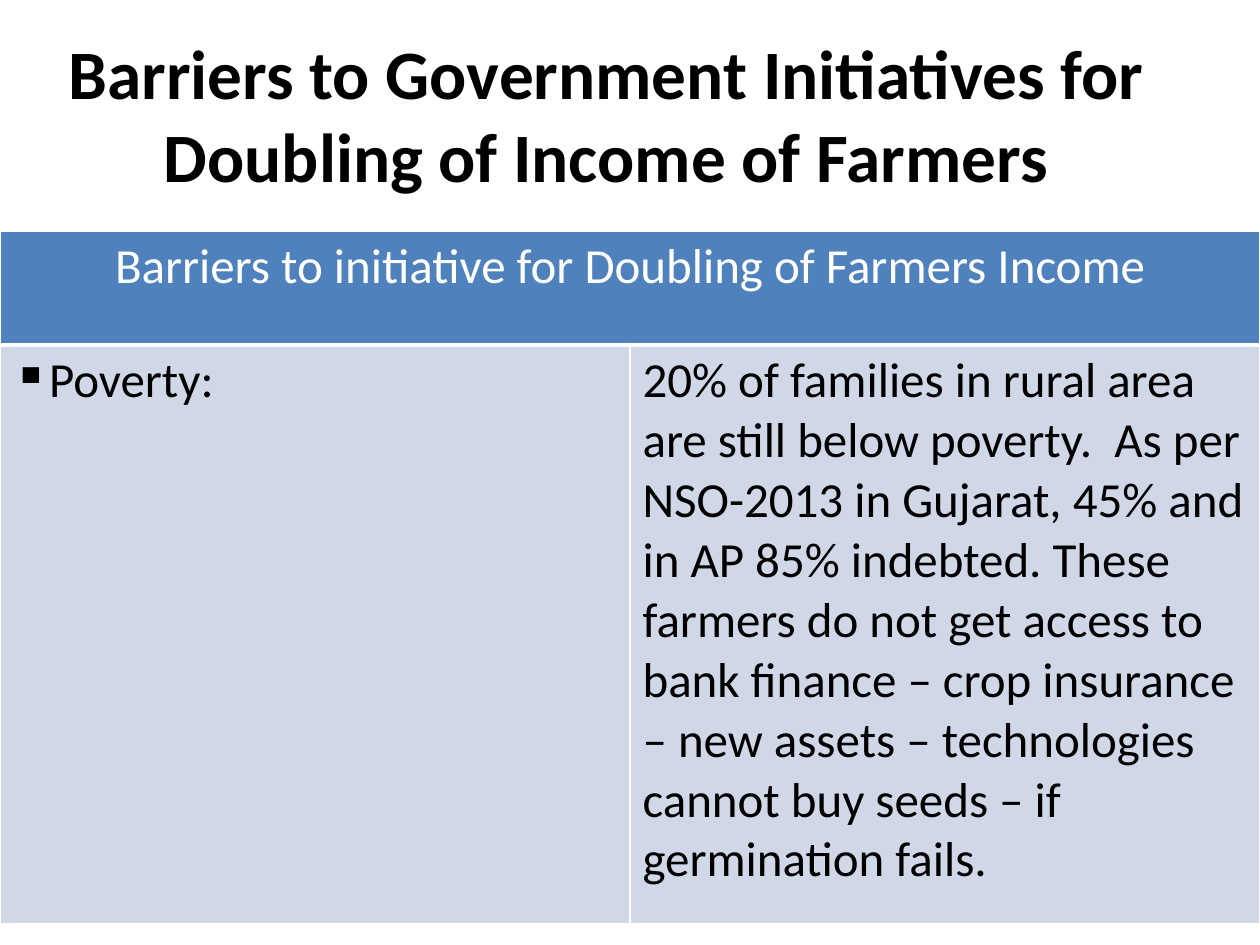
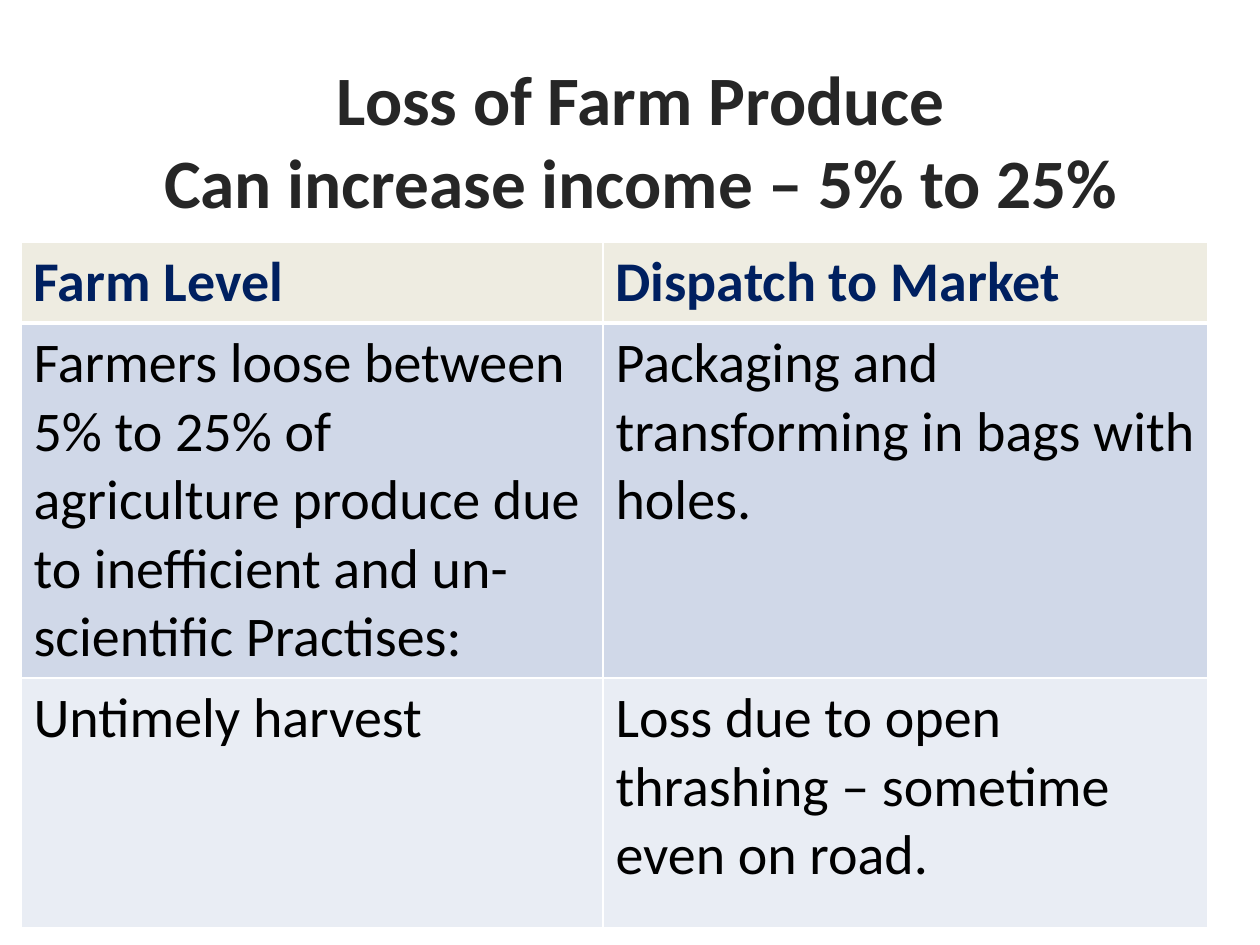
"""Build two slides on farm income, each with a title and a table."""
import pptx
import pptx.dml.color
import pptx.enum.text
import pptx.oxml
import pptx.oxml.ns
import pptx.util

THEME = {
    "font": "Calibri",
    "title_size": 39.6,
    "black": "000000",
    "charcoal": "262626",
    "navy": "002060",
    "white": "FFFFFF",
    "blue": "4F81BD",
    "cream": "EEECE1",
    "bands": ("D0D8E8", "E9EDF4"),
    "border": 1,
    "header_border": 3,
}

SLIDES = [
    {
        "title": ["Barriers to Government Initiatives for", "Doubling of Income of Farmers"],
        "title_box": (32, 32, 1166, 179),
        "title_insets": {"margin_right": 30, "margin_bottom": 22},
        "title_color": "black",
        "table_origin": (0, 231),
        "columns": (630, 630),
        "row_heights": (114, 579),
        "text_size": 28,
        "header": {"fill": "blue", "color": "white", "bold": False, "merged": True},
        "bulleted": ["Poverty:"],
        "rows": [
            ["Barriers to initiative for Doubling of Farmers Income"],
            ["Poverty:",
             "20% of families in rural area are still below poverty.  As per NSO-2013 in "
             "Gujarat, 45% and in AP 85% indebted. These farmers do not get access to bank "
             "finance – crop insurance – new assets – technologies cannot buy seeds – if "
             "germination fails."],
        ],
    },
    {
        "title": ["Loss of Farm Produce", "Can increase income – 5% to 25%"],
        "title_box": (53, 32, 1176, 179),
        "title_insets": {"margin_top": 41},
        "title_color": "charcoal",
        "table_origin": (21, 242),
        "columns": (582, 605),
        "row_heights": (80, 355, 250),
        "text_size": 32,
        "header": {"fill": "cream", "color": "navy", "bold": True, "merged": False},
        "bulleted": [],
        "rows": [
            ["Farm Level", "Dispatch to Market"],
            ["Farmers loose between 5% to 25% of agriculture produce due to inefficient "
             "and un-scientific Practises:",
             "Packaging and transforming in bags with holes."],
            ["Untimely harvest", "Loss due to open thrashing – sometime even on road."],
        ],
    },
]


def px(length):
    return pptx.util.Emu(round(length * 914400 / 126))


def rgb(value):
    return pptx.dml.color.RGBColor.from_string(value)


def format_text(text_frame, size, color, bold, centered):
    for paragraph in text_frame.paragraphs:
        if centered:
            paragraph.alignment = pptx.enum.text.PP_ALIGN.CENTER
        for run in paragraph.runs:
            run.font.name = THEME["font"]
            run.font.size = pptx.util.Pt(size)
            run.font.bold = bold
            run.font.color.rgb = rgb(color)


def add_title(slide, content):
    title = slide.shapes.title
    title.left, title.top, title.width, title.height = map(px, content["title_box"])
    text_frame = title.text_frame
    text_frame.text = "\n".join(content["title"])
    text_frame.word_wrap = True
    text_frame.auto_size = pptx.enum.text.MSO_AUTO_SIZE.NONE
    text_frame.vertical_anchor = pptx.enum.text.MSO_ANCHOR.MIDDLE
    text_frame.margin_top = text_frame.margin_bottom = px(6)
    for side, inset in content["title_insets"].items():
        setattr(text_frame, side, px(inset))
    format_text(text_frame, THEME["title_size"], THEME[content["title_color"]], True, True)


def set_borders(cell, bottom_width):
    properties = cell._tc.get_or_add_tcPr()
    widths = {"lnL": THEME["border"], "lnR": THEME["border"],
              "lnT": THEME["border"], "lnB": bottom_width}
    for side, width in widths.items():
        properties.append(pptx.oxml.parse_xml(
            f'<a:{side} {pptx.oxml.ns.nsdecls("a")} w="{pptx.util.Pt(width)}"><a:solidFill>'
            f'<a:srgbClr val="{THEME["white"]}"/></a:solidFill></a:{side}>'))


def add_bullet(paragraph):
    properties = paragraph._p.get_or_add_pPr()
    properties.set("marL", "0")
    properties.set("indent", "0")
    properties.append(pptx.oxml.parse_xml(
        f'<a:buChar {pptx.oxml.ns.nsdecls("a")} char="▪"/>'))


def add_table(slide, content):
    columns, heights, header = content["columns"], content["row_heights"], content["header"]
    bounds = (*content["table_origin"], sum(columns), sum(heights))
    table = slide.shapes.add_table(len(heights), len(columns), *map(px, bounds)).table
    for column, width in zip(table.columns, columns):
        column.width = px(width)
    for row, height in zip(table.rows, heights):
        row.height = px(height)
    if header["merged"]:
        table.cell(0, 0).merge(table.cell(0, len(columns) - 1))
    for row_index, texts in enumerate(content["rows"]):
        is_header = row_index == 0
        fill = THEME[header["fill"]] if is_header else THEME["bands"][(row_index - 1) % 2]
        color = THEME[header["color"]] if is_header else THEME["black"]
        for column_index, text in enumerate(texts):
            cell = table.cell(row_index, column_index)
            set_borders(cell, THEME["header_border" if is_header else "border"])
            cell.fill.solid()
            cell.fill.fore_color.rgb = rgb(fill)
            cell.text_frame.text = text
            format_text(cell.text_frame, content["text_size"], color,
                        is_header and header["bold"], is_header and header["merged"])
            if text in content["bulleted"]:
                add_bullet(cell.text_frame.paragraphs[0])


def main():
    presentation = pptx.Presentation()
    presentation.slide_width, presentation.slide_height = px(1260), px(945)
    title_only = presentation.slide_layouts[5]
    for content in SLIDES:
        slide = presentation.slides.add_slide(title_only)
        add_title(slide, content)
        add_table(slide, content)
    presentation.save("out.pptx")


if __name__ == "__main__":
    main()
